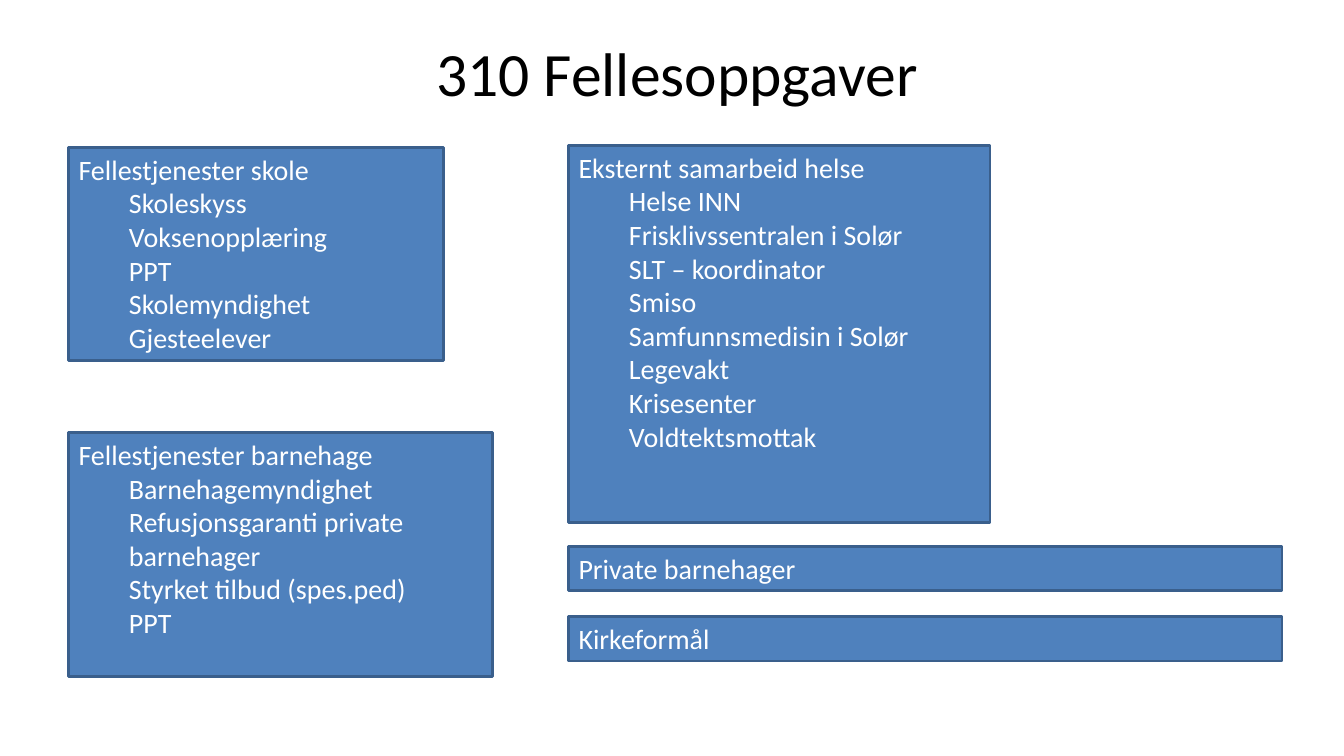
from pptx import Presentation
from pptx.dml.color import RGBColor
from pptx.enum.shapes import MSO_SHAPE
from pptx.enum.text import MSO_ANCHOR, PP_ALIGN
from pptx.util import Cm, Pt

RECTANGLE = MSO_SHAPE.RECTANGLE
TOP, MIDDLE = MSO_ANCHOR.TOP, MSO_ANCHOR.MIDDLE
LEFT, CENTER = PP_ALIGN.LEFT, PP_ALIGN.CENTER
LEFT_COLUMN, RIGHT_COLUMN = 1.73, 14.33


def color(value):
    return RGBColor.from_string(value)


def write(paragraph, text, size=20, fill="FFFFFF", align=LEFT, indent=0):
    paragraph.level = 1 if indent else 0
    properties = paragraph._p.get_or_add_pPr()
    properties.set("marL", str(Cm(indent)))
    properties.set("indent", "0")
    paragraph.alignment = align
    run = paragraph.add_run()
    run.text = text
    run.font.name = "Calibri"
    run.font.size = Pt(size)
    run.font.color.rgb = color(fill)


presentation = Presentation()
presentation.slide_width = Cm(33.87)
presentation.slide_height = Cm(19.05)
slide = presentation.slides.add_slide(presentation.slide_layouts[6])

title = slide.shapes.add_textbox(Cm(1.83), Cm(0.23), Cm(30.48), Cm(3.18))
title.text_frame.word_wrap = True
title.text_frame.vertical_anchor = MIDDLE
write(title.text_frame.paragraphs[0], "310 Fellesoppgaver", size=44, fill="000000", align=CENTER)

boxes = [
    (LEFT_COLUMN, 3.71, 9.45, 5.38, "Fellestjenester skole",
     ["Skoleskyss", "Voksenopplæring", "PPT", "Skolemyndighet", "Gjesteelever"]),
    (LEFT_COLUMN, 10.9, 10.69, 6.15, "Fellestjenester barnehage",
     ["Barnehagemyndighet", "Refusjonsgaranti private barnehager",
      "Styrket tilbud (spes.ped)", "PPT"]),
    (RIGHT_COLUMN, 3.66, 10.62, 9.5, "Eksternt samarbeid helse",
     ["Helse INN", "Frisklivssentralen i Solør", "SLT – koordinator", "Smiso",
      "Samfunnsmedisin i Solør", "Legevakt", "Krisesenter", "Voldtektsmottak"]),
    (RIGHT_COLUMN, 13.77, 17.98, 1.12, "Private barnehager", []),
    (RIGHT_COLUMN, 15.54, 17.98, 1.12, "Kirkeformål", []),
]

for left, top, width, height, heading, tasks in boxes:
    box = slide.shapes.add_shape(RECTANGLE, Cm(left), Cm(top), Cm(width), Cm(height))
    box.shadow.inherit = False
    box.fill.solid()
    box.fill.fore_color.rgb = color("4F81BD")
    box.line.color.rgb = color("3A5F8C")
    box.line.width = Pt(2)
    frame = box.text_frame
    frame.word_wrap = True
    frame.vertical_anchor = TOP
    write(frame.paragraphs[0], heading)
    for task in tasks:
        write(frame.add_paragraph(), task, indent=1.27)

presentation.save("out.pptx")
